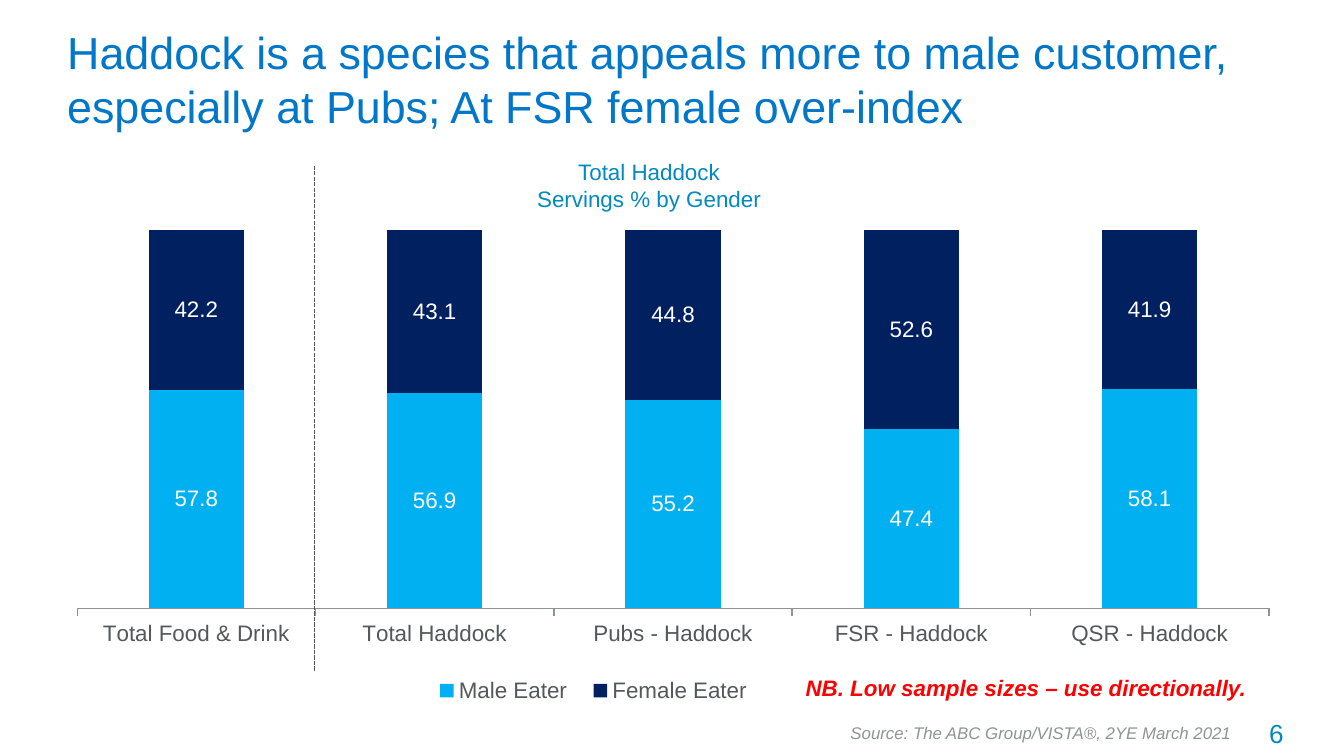
from lxml import etree
from pptx import Presentation
from pptx.chart.data import CategoryChartData
from pptx.dml.color import RGBColor
from pptx.enum.chart import XL_CHART_TYPE, XL_LABEL_POSITION, XL_LEGEND_POSITION, XL_TICK_MARK
from pptx.enum.dml import MSO_LINE
from pptx.enum.shapes import MSO_CONNECTOR
from pptx.enum.text import MSO_ANCHOR, MSO_AUTO_SIZE, PP_ALIGN
from pptx.oxml.ns import qn
from pptx.util import Inches, Pt

STACKED = XL_CHART_TYPE.COLUMN_STACKED_100
LABEL_CENTER = XL_LABEL_POSITION.CENTER
LEGEND_BOTTOM = XL_LEGEND_POSITION.BOTTOM
TICK_OUTSIDE, TICK_NONE = XL_TICK_MARK.OUTSIDE, XL_TICK_MARK.NONE
SHORT_DASH = MSO_LINE.SQUARE_DOT
STRAIGHT = MSO_CONNECTOR.STRAIGHT
MIDDLE = MSO_ANCHOR.MIDDLE
NO_AUTOFIT = MSO_AUTO_SIZE.NONE
LEFT, CENTER, RIGHT = PP_ALIGN.LEFT, PP_ALIGN.CENTER, PP_ALIGN.RIGHT

FONT = "Arial"
TITLE_BLUE, ACCENT_BLUE = "0077C8", "008AC0"
DARK_GRAY, MID_GRAY = "54585A", "8E9396"
WHITE, RED = "FFFFFF", "FF0000"

CATEGORIES = ["Total Food & Drink", "Total Haddock", "Pubs - Haddock",
              "FSR - Haddock", "QSR - Haddock"]
SERIES = [
    ("Male Eater", [57.8, 56.9, 55.2, 47.4, 58.1], "00B0F0"),
    ("Female Eater", [42.2, 43.1, 44.8, 52.6, 41.9], "002060"),
]


def color(value):
    return RGBColor.from_string(value)


def style_font(font, size, value, bold=False, italic=False):
    font.name = FONT
    font.size = Pt(size)
    font.bold = bold
    font.italic = italic
    font.color.rgb = color(value)


def write_lines(frame, lines, size, value, align=LEFT, bold=False, italic=False):
    for index, line in enumerate(lines):
        para = frame.add_paragraph() if index else frame.paragraphs[0]
        para.alignment = align
        span = para.add_run()
        span.text = line
        style_font(span.font, size, value, bold, italic)


def add_title(page, text):
    title = page.shapes.title
    title.left, title.top = Inches(0.4), Inches(0.23)
    title.width, title.height = Inches(9.17), Inches(0.71)
    frame = title.text_frame
    frame.auto_size = NO_AUTOFIT
    frame.vertical_anchor = MIDDLE
    write_lines(frame, [text], 24, TITLE_BLUE)


def add_text(page, at, lines, size, value, wrap=True, **style):
    box = page.shapes.add_textbox(*[Inches(length) for length in at])
    box.text_frame.word_wrap = wrap
    write_lines(box.text_frame, lines, size, value, **style)


def add_divider(page, x, top, bottom):
    divider = page.shapes.add_connector(
        STRAIGHT, Inches(x), Inches(bottom), Inches(x), Inches(top))
    divider.line.color.rgb = color(DARK_GRAY)
    divider.line.width = Pt(0.75)
    divider.line.dash_style = SHORT_DASH
    etree.SubElement(divider._element.spPr, qn("a:effectLst"))


def place_part(parent, position, percents, inner=False):
    for old in parent.findall(qn("c:layout")):
        parent.remove(old)
    layout = etree.Element(qn("c:layout"))
    manual = etree.SubElement(layout, qn("c:manualLayout"))
    settings = [("layoutTarget", "inner")] if inner else []
    settings += [("xMode", "edge"), ("yMode", "edge")]
    settings += [(name, percent / 100) for name, percent in zip("xywh", percents)]
    for name, value in settings:
        etree.SubElement(manual, qn(f"c:{name}")).set("val", str(value))
    parent.insert(position, layout)


def add_gender_chart(page):
    data = CategoryChartData(number_format="#,##0.0")
    data.categories = CATEGORIES
    for name, values, _ in SERIES:
        data.add_series(name, values)
    chart = page.shapes.add_chart(
        STACKED, Inches(0.4), Inches(1.52), Inches(9.17), Inches(3.75), data).chart
    style_font(chart.font, 12, DARK_GRAY)
    chart.has_title = False

    chart.value_axis.visible = False
    chart.value_axis.has_major_gridlines = False
    axis = chart.category_axis
    axis.major_tick_mark = TICK_OUTSIDE
    axis.minor_tick_mark = TICK_NONE
    axis.format.line.color.rgb = color(MID_GRAY)

    plot = chart.plots[0]
    plot.gap_width = 150
    plot.overlap = 100
    for series, (_, _, fill) in zip(plot.series, SERIES):
        series.format.fill.solid()
        series.format.fill.fore_color.rgb = color(fill)
        labels = series.data_labels
        labels.show_value = True
        labels.number_format = "#,##0.0"
        labels.number_format_is_linked = False
        labels.position = LABEL_CENTER
        style_font(labels.font, 12, WHITE)

    chart.has_legend = True
    chart.legend.position = LEGEND_BOTTOM
    chart.legend.include_in_layout = False
    style_font(chart.legend.font, 12, DARK_GRAY)
    plot_area = chart._chartSpace.chart.plotArea
    place_part(plot_area, 0, (1.9, 5.2, 96.7, 75), inner=True)
    place_part(chart.legend._element, 1, (29.8, 93, 28, 7))


def main():
    deck = Presentation()
    deck.slide_width = Inches(10)
    deck.slide_height = deck.slide_width * 9 // 16
    page = deck.slides.add_slide(deck.slide_layouts[5])
    add_title(page, "Haddock is a species that appeals more to male customer, "
                    "especially at Pubs; At FSR female over-index")
    add_gender_chart(page)
    add_text(page, (3.89, 1.13, 1.88, 0.5),
             ["Total Haddock", "Servings % by Gender"], 12, ACCENT_BLUE,
             wrap=False, align=CENTER)
    add_divider(page, 2.34, 1.23, 4.99)
    add_text(page, (8.85, 5.29, 0.8, 0.34), ["6"], 14, ACCENT_BLUE, align=RIGHT)
    add_text(page, (5.7, 4.97, 3.87, 0.3),
             ["NB. Low sample sizes – use directionally."], 12, RED,
             align=CENTER, bold=True, italic=True)
    add_text(page, (6.23, 5.33, 3.14, 0.25),
             ["Source: The ABC Group/VISTA®, 2YE March 2021"], 9, MID_GRAY,
             wrap=False, italic=True)
    deck.save("out.pptx")


if __name__ == "__main__":
    main()
